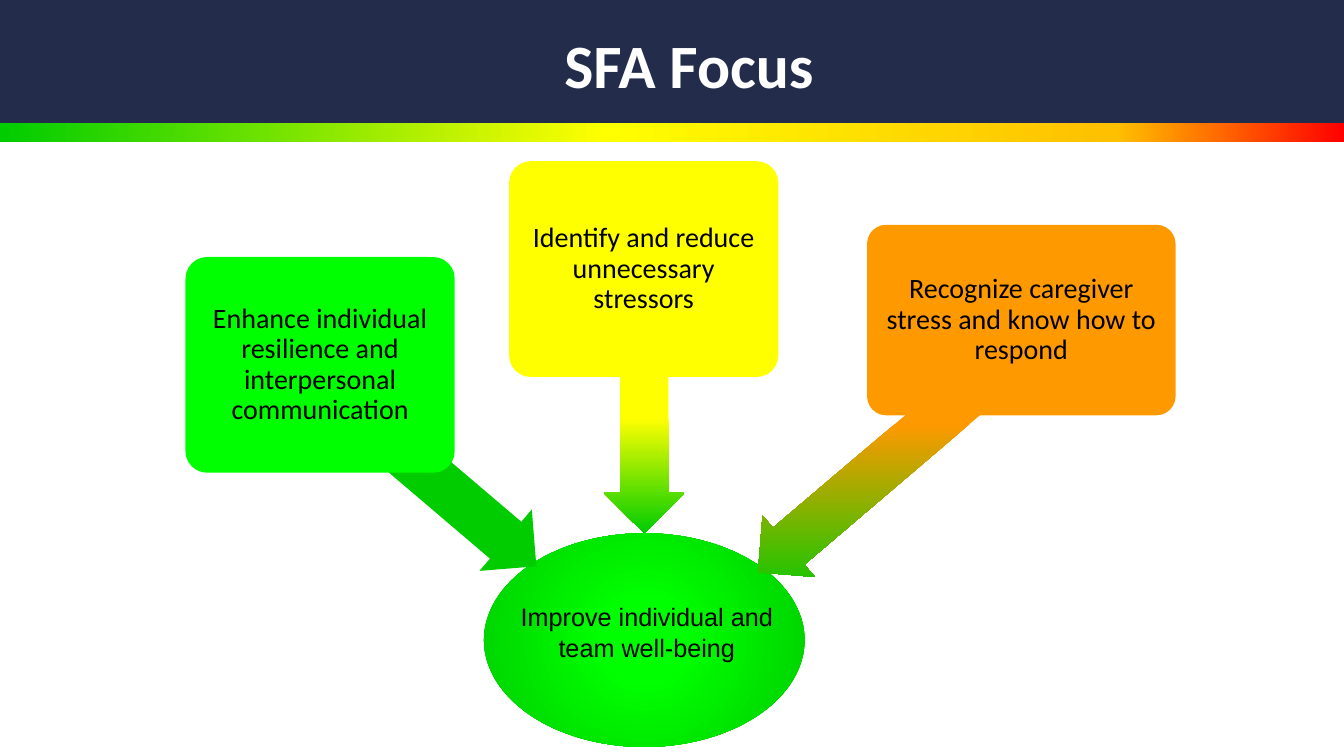
from lxml import etree
from pptx import Presentation
from pptx.dml.color import RGBColor
from pptx.enum.shapes import MSO_SHAPE as Shape
from pptx.enum.text import MSO_ANCHOR as Anchor, PP_ALIGN as Align
from pptx.oxml.ns import qn
from pptx.util import Inches, Pt

NAVY = RGBColor(0x23, 0x2D, 0x4B)
WHITE = RGBColor(0xFF, 0xFF, 0xFF)
BLACK = RGBColor(0x00, 0x00, 0x00)
GREEN = RGBColor(0x00, 0xCC, 0x00)
LIME = RGBColor(0x00, 0xFF, 0x00)
YELLOW = RGBColor(0xFF, 0xFF, 0x00)
AMBER = RGBColor(0xFF, 0xC0, 0x00)
ORANGE = RGBColor(0xFF, 0x99, 0x00)
RED = RGBColor(0xFF, 0x00, 0x00)


class FocusSlide:
    """Draws styled elements on one slide."""

    def __init__(self, deck):
        self.slide = deck.slides.add_slide(deck.slide_layouts[5])
        self.shapes = self.slide.shapes

    def block(self, kind, place, color=None):
        block = self.shapes.add_shape(kind, *map(Inches, place))
        block.shadow.inherit = False
        block.line.fill.background()
        if color is None:
            block.fill.background()
        else:
            block.fill.solid()
            block.fill.fore_color.rgb = color
        return block

    def gradient(self, kind, place, stops, angle=None):
        block = self.block(kind, place)
        fill = etree.Element(qn("a:gradFill"), rotWithShape="0")
        stop_list = etree.SubElement(fill, qn("a:gsLst"))
        for percent, color in stops:
            stop = etree.SubElement(stop_list, qn("a:gs"), pos=str(percent * 1000))
            etree.SubElement(stop, qn("a:srgbClr"), val=str(color))
        if angle is None:
            radial = etree.SubElement(fill, qn("a:path"), path="circle")
            center = dict.fromkeys("ltrb", "50000")
            etree.SubElement(radial, qn("a:fillToRect"), **center)
        else:
            etree.SubElement(fill, qn("a:lin"), ang=str(angle * 60000), scaled="0")
        properties = block._element.spPr
        properties.replace(properties.find(qn("a:noFill")), fill)
        return block

    def arrow(self, place, rotation, stops):
        if len(stops) == 1:
            arrow = self.block(Shape.LEFT_ARROW, place, stops[0][1])
        else:
            arrow = self.gradient(Shape.LEFT_ARROW, place, stops, 90)
        arrow.adjustments[0] = 0.6
        arrow.adjustments[1] = 0.5
        arrow.rotation = rotation

    def set_text(self, frame, text, size, font="Calibri", color=BLACK, bold=False, spacing=0.9):
        frame.word_wrap = True
        frame.text = text
        paragraph = frame.paragraphs[0]
        paragraph.alignment = Align.CENTER
        paragraph.line_spacing = spacing
        style = paragraph.runs[0].font
        style.size = Pt(size)
        style.name = font
        style.bold = bold
        style.color.rgb = color

    def goal(self, place, color, text):
        goal = self.block(Shape.ROUNDED_RECTANGLE, place, color)
        goal.adjustments[0] = 0.1
        frame = goal.text_frame
        frame.vertical_anchor = Anchor.MIDDLE
        frame.margin_left = frame.margin_right = Inches(0.04)
        frame.margin_top = frame.margin_bottom = Inches(0.04)
        self.set_text(frame, text, 20)

    def label(self, place, text):
        label = self.shapes.add_textbox(*map(Inches, place))
        self.set_text(label.text_frame, text, 18, "Arial", spacing=1.0)

    def title(self, place, text):
        title = self.shapes.title
        title.left, title.top, title.width, title.height = map(Inches, place)
        title.text_frame.vertical_anchor = Anchor.MIDDLE
        self.set_text(title.text_frame, text, 44, color=WHITE, bold=True)
        self.shapes._spTree.append(title._element)


def main():
    deck = Presentation()
    deck.slide_width, deck.slide_height = Inches(13.33), Inches(7.5)
    focus = FocusSlide(deck)

    spectrum = [(0, GREEN), (45, YELLOW), (83, AMBER), (100, RED)]
    focus.gradient(Shape.RECTANGLE, (0, 1.22, 13.33, 0.19), spectrum, 0)
    focus.block(Shape.RECTANGLE, (0, 0, 13.33, 1.22), NAVY)
    focus.title((1.75, 0.13, 10.17, 1.1), "SFA Focus")

    focus.gradient(Shape.OVAL, (4.8, 5.29, 3.18, 2.12), [(21, LIME), (100, GREEN)])
    goals = [
        ((2.88, 4.32, 2.77, 0.8), 220.4, [(0, GREEN)],
         (1.84, 2.55, 2.67, 2.14), LIME,
         "Enhance individual resilience and interpersonal communication"),
        ((5.15, 3.65, 2.48, 0.8), 270, [(0, YELLOW), (54, YELLOW), (100, GREEN)],
         (5.05, 1.6, 2.67, 2.14), YELLOW,
         "Identify and reduce unnecessary stressors"),
        ((7.11, 4.17, 3.42, 0.8), 319.6, [(1, ORANGE), (37, ORANGE), (100, GREEN)],
         (8.6, 2.23, 3.06, 1.89), ORANGE,
         "Recognize caregiver stress and know how to respond"),
    ]
    for arrow_place, rotation, stops, goal_place, color, text in goals:
        focus.arrow(arrow_place, rotation, stops)
        focus.goal(goal_place, color, text)
    focus.label((5, 5.92, 2.83, 0.71), "Improve individual and team well-being")

    deck.save("out.pptx")


if __name__ == "__main__":
    main()
